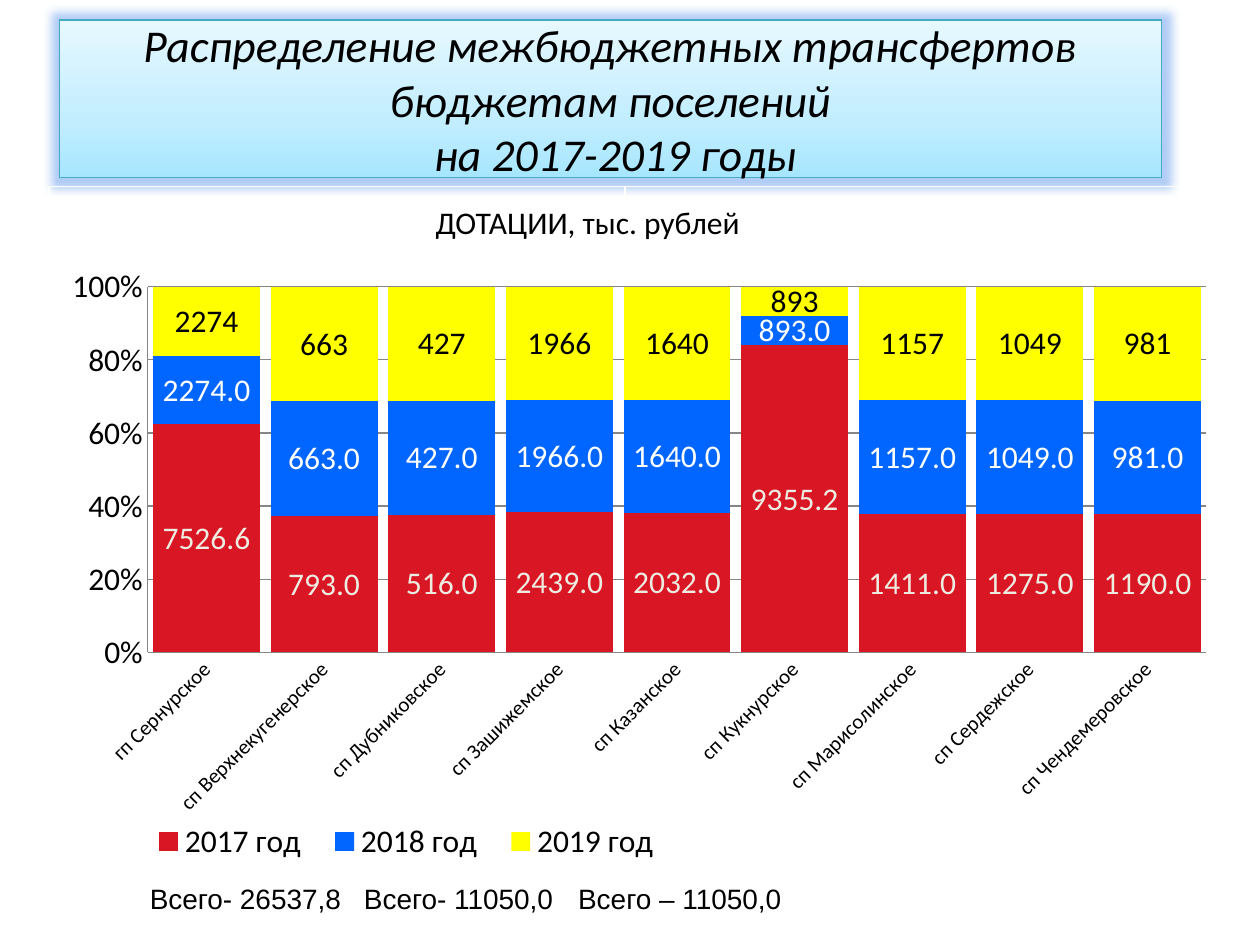
from dataclasses import dataclass
from copy import deepcopy

from lxml.etree import SubElement as Sub
from pptx import Presentation
from pptx.chart.data import CategoryChartData as Data
from pptx.dml.color import RGBColor as RGB
from pptx.enum.chart import XL_CHART_TYPE as Kind, XL_LEGEND_POSITION as Side
from pptx.enum.chart import XL_TICK_MARK as Tick
from pptx.enum.shapes import MSO_SHAPE as Form
from pptx.enum.text import MSO_ANCHOR as Anchor, PP_ALIGN as Align
from pptx.oxml.ns import qn
from pptx.util import Inches, Pt


@dataclass(frozen=True)
class Theme:
    ink: str = "000000"
    white: str = "FFFFFF"
    cream: str = "EEECE1"
    red: str = "D81624"
    blue: str = "0066FF"
    yellow: str = "FFFF00"
    grey: str = "868686"
    edge: str = "46AAC5"
    glow: str = "3B82E8"
    fade: tuple = ((0, "A7E6FF"), (0.35, "C1EDFF"), (1, "E7F8FF"))
    face: str = "Calibri"
    plain: str = "Arial"
    head: int = 26
    body: int = 18
    note: int = 16
    small: int = 12


def tint(hue):
    return RGB.from_string(hue)


def style(font, size, hue, face):
    font.size, font.name = Pt(size), face
    font.color.rgb = tint(hue)


def place(owner, **box):
    """Fix the inner place of a chart part, in shares of the chart."""
    for old in owner.findall(qn("c:layout")):
        owner.remove(old)
    spot = Sub(owner, qn("c:layout"))
    form = Sub(spot, qn("c:manualLayout"))
    for key, val in box.items():
        Sub(form, qn(f"c:{key}"), val=str(val))
    return spot


class Page:
    """Grid of 100 columns by 75 rows."""

    def __init__(self, deck, theme):
        self.theme = theme
        self.col, self.row = deck.slide_width / 100, deck.slide_height / 75
        self.slide = deck.slides.add_slide(deck.slide_layouts[6])
        self.shapes = self.slide.shapes

    def box(self, x, y, w, h):
        return [int(n * u) for n, u in zip((x, y, w, h), (self.col, self.row) * 2)]

    def add_run(self, para, text, size, face, slant=None):
        run = para.add_run()
        run.text = text
        style(run.font, size, self.theme.ink, face)
        run.font.italic = slant

    def banner(self, area, lines):
        t = self.theme
        shape = self.shapes.add_shape(Form.ROUNDED_RECTANGLE, *self.box(*area))
        shape.adjustments[0] = 0
        shape.line.color.rgb, shape.line.width = tint(t.edge), Pt(0.75)
        # Gradient with a middle stop
        fill = shape.fill
        fill.gradient()
        fill.gradient_angle = 90
        first = shape.element.spPr.find(".//" + qn("a:gs"))
        first.addnext(deepcopy(first))
        for stop, (pos, hue) in zip(fill.gradient_stops, t.fade):
            stop.position, stop.color.rgb = pos, tint(hue)
        # Soft glow
        shape.shadow.inherit = False
        halo = shape.element.spPr.find(qn("a:effectLst"))
        glow = Sub(halo, qn("a:glow"), rad=str(Inches(0.14)))
        hue = Sub(glow, qn("a:srgbClr"), val=t.glow)
        Sub(hue, qn("a:alpha"), val="40000")
        # Heading
        frame = shape.text_frame
        frame.word_wrap, frame.vertical_anchor = True, Anchor.MIDDLE
        para = frame.paragraphs[0]
        para.alignment = Align.CENTER
        for i, line in enumerate(lines):
            if i:
                para.add_line_break()
            self.add_run(para, line, t.head, t.face, True)

    def table(self, area, cols):
        grid = self.shapes.add_table(1, cols, *self.box(*area)).table
        grid.first_row = grid.horz_banding = False
        for cell in grid.iter_cells():
            cell.fill.background()
            props = cell._tc.get_or_add_tcPr()
            for i, (side, wide) in enumerate(zip("LRTB", (1, 1, 1, 3))):
                line = Sub(props, qn(f"a:ln{side}"), w=str(Pt(wide)))
                paint = Sub(line, qn("a:solidFill"))
                Sub(paint, qn("a:srgbClr"), val=self.theme.white)
                props.insert(i, line)

    def text(self, area, parts, size, face, step=0):
        frame = self.shapes.add_textbox(*self.box(*area)).text_frame
        frame.word_wrap = True
        para = frame.paragraphs[0]
        if step:
            tabs = Sub(para._p.get_or_add_pPr(), qn("a:tabLst"))
            for i in range(1, len(parts)):
                Sub(tabs, qn("a:tab"), pos=str(int(i * step * self.col)), algn="l")
        for i, part in enumerate(parts):
            self.add_run(para, "\t" * (i > 0) + part, size, face)

    def chart(self, area, cats, rows):
        t = self.theme
        data = Data()
        data.categories = cats
        for name, vals, *_ in rows:
            data.add_series(name, vals)
        chart = self.shapes.add_chart(
            Kind.COLUMN_STACKED_100, *self.box(*area), data).chart
        style(chart.font, t.body, t.ink, t.face)
        chart.has_title = False
        # Bars and labels
        plot = chart.plots[0]
        plot.gap_width, plot.overlap = 10, 100
        plot.vary_by_categories = False
        for bar, (_, _, hue, ink, form) in zip(plot.series, rows):
            bar.format.fill.solid()
            bar.format.fill.fore_color.rgb = tint(hue)
            tags = bar.data_labels
            tags.show_value = True
            tags.number_format, tags.number_format_is_linked = form, False
            style(tags.font, t.body, ink, t.face)
        # Axes
        across, up = chart.category_axis, chart.value_axis
        for axis in (across, up):
            axis.major_tick_mark = axis.minor_tick_mark = Tick.NONE
            axis.format.line.color.rgb = tint(t.grey)
        style(across.tick_labels.font, t.small, t.ink, t.face)
        turn = across._element.find(qn("c:txPr")).find(qn("a:bodyPr"))
        turn.set("rot", str(-45 * 60000))
        up.has_major_gridlines = True
        up.major_gridlines.format.line.color.rgb = tint(t.grey)
        up.maximum_scale, up.major_unit = 1, 0.2
        up.tick_labels.number_format = "0%"
        up.tick_labels.number_format_is_linked = False
        # Plot and legend places
        zone = chart._chartSpace.chart.plotArea
        zone.insert(0, place(zone, layoutTarget="inner", xMode="edge", yMode="edge",
                             x=0.12, y=0.05, w=0.86, h=0.59))
        chart.has_legend = True
        key = chart.legend
        key.position, key.include_in_layout = Side.BOTTOM, False
        style(key.font, t.body, t.ink, t.face)
        node = key._element
        spot = place(node, xMode="edge", yMode="edge", x=0.11, y=0.9, w=0.44, h=0.09)
        node.find(qn("c:legendPos")).addnext(spot)


def main():
    deck = Presentation()
    deck.slide_width, deck.slide_height = Inches(10), Inches(7.5)
    t = Theme()
    page = Page(deck, t)

    # Heading and frame
    page.banner((4.7, 1.6, 87.5, 12.5), (
        "Распределение межбюджетных трансфертов бюджетам поселений",
        " на 2017-2019 годы"))
    page.table((3.9, 14.8, 91.4, 52.5), 2)

    # Grants by settlement
    towns = ("гп Сернурское", "сп Верхнекугенерское", "сп Дубниковское",
             "сп Зашижемское", "сп Казанское", "сп Кукнурское",
             "сп Марисолинское", "сп Сердежское", "сп Чендемеровское")
    first = (7526.6, 793, 516, 2439, 2032, 9355.2, 1411, 1275, 1190)
    later = (2274, 663, 427, 1966, 1640, 893, 1157, 1049, 981)
    page.chart((0, 20.3, 97.7, 49.2), towns, (
        ("2017 год", first, t.red, t.cream, "0.0"),
        ("2018 год", later, t.blue, t.white, "0.0"),
        ("2019 год", later, t.yellow, t.ink, "General")))

    # Totals and caption
    page.text((10.9, 69.5, 85.2, 3.7),
              ("Всего- 26537,8", "Всего- 11050,0", "Всего – 11050,0"),
              t.note, t.plain, 17)
    page.text((33.6, 15.6, 33.6, 4), ("ДОТАЦИИ, тыс. рублей",), t.body, t.face)

    deck.save("out.pptx")


if __name__ == "__main__":
    main()
